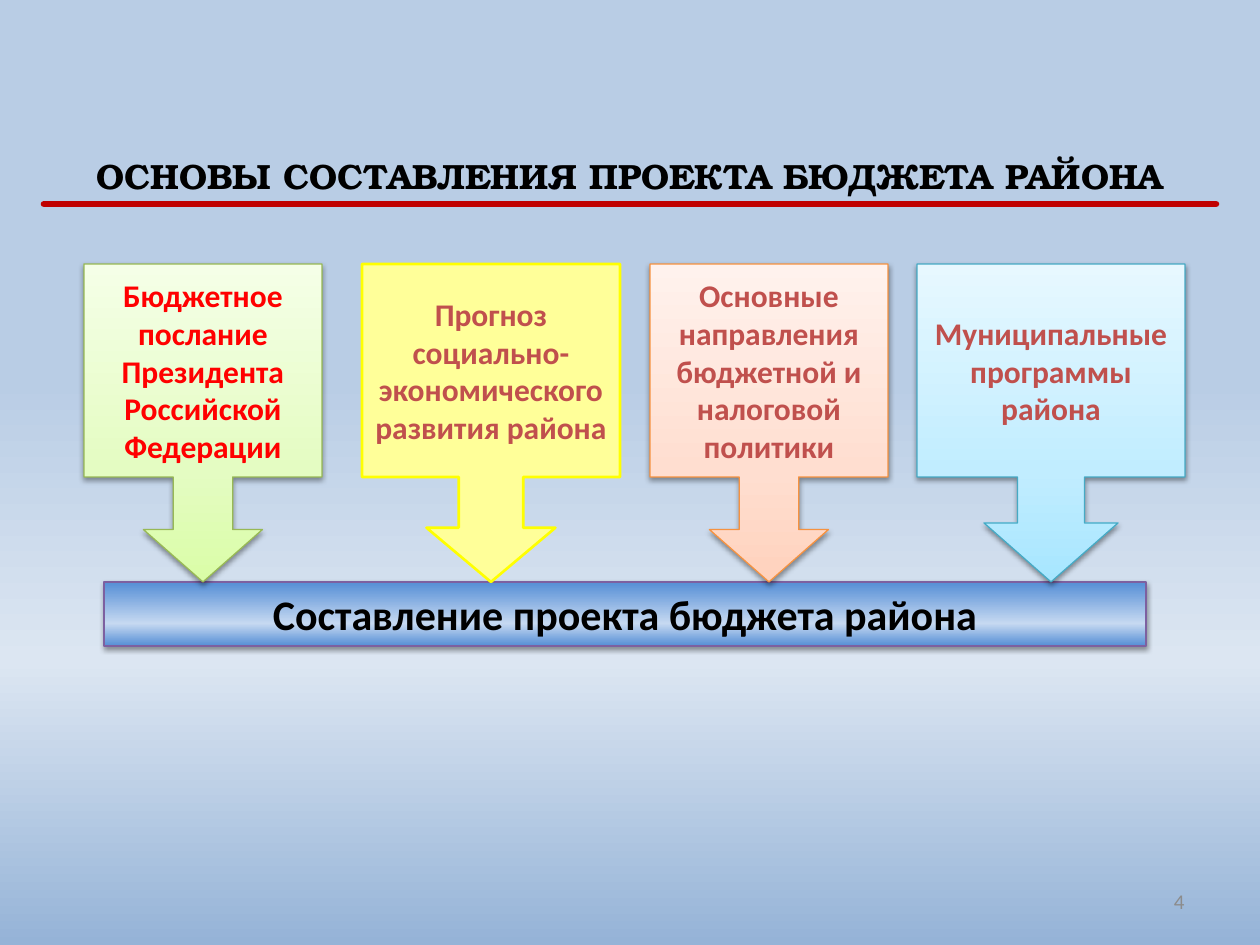
from dataclasses import dataclass

from lxml import etree
from pptx import Presentation
from pptx import util as u
from pptx.dml.color import RGBColor
from pptx.enum import shapes, text
from pptx.oxml.ns import qn

EMU_PER_PX = 914400 / 126


@dataclass(frozen=True)
class Theme:
    heading_font: str = "TeX Gyre Bonum"
    body_font: str = "Calibri"
    title_size: int = 20
    bar_size: int = 24
    source_size: int = 18
    number_size: int = 12
    ink: str = "000000"
    alert: str = "FF0000"
    brick: str = "C0504D"
    grey: str = "8C8C8C"
    rule: str = "C00000"
    bar_line: str = "7D60A0"
    background: tuple = ((0, "B9CDE5"), (40, "B9CDE5"), (70, "DCE6F2"), (100, "95B3D7"))
    bar: tuple = ((0, "558ED5"), (35, "C6D9F1"), (100, "558ED5"))
    green: tuple = ((0, "DAFDA7"), (35, "E4FCC2"), (100, "F5FFE7"))
    peach: tuple = ((0, "FFD2BD"), (35, "FFDED0"), (100, "FFF2ED"))
    sky: tuple = ((0, "A7E6FF"), (35, "C1EDFF"), (100, "E7F8FF"))
    yellow: str = "FFFF99"


THEME = Theme()

# text, left, width, fill, line colour, line width, text colour, head length
SOURCES = (
    ("Бюджетное послание Президента Российской Федерации",
     0, 238, THEME.green, "98B955", 0.75, THEME.alert, 0.22),
    ("Прогноз социально-экономического развития района",
     278, 258, THEME.yellow, "FFFF00", 1.5, THEME.brick, 0.21),
    ("Основные направления бюджетной и налоговой политики",
     566, 238, THEME.peach, "F69240", 0.75, THEME.brick, 0.22),
    ("Муниципальные программы района",
     833, 268, THEME.sky, "46AAC5", 0.75, THEME.brick, 0.22),
)


def px(value):
    return u.Emu(round(value * EMU_PER_PX))


def rgb(value):
    return RGBColor.from_string(value)


def fill_gradient(fill, element, stops, angle):
    """Fill with any number of stops; the angle runs clockwise in degrees."""
    fill.gradient()
    gradient = element.find(".//" + qn("a:gradFill"))
    stop_list = gradient.find(qn("a:gsLst"))
    for stop in list(stop_list):
        stop_list.remove(stop)
    for position, color in stops:
        stop = etree.SubElement(stop_list, qn("a:gs"), pos=str(position * 1000))
        etree.SubElement(stop, qn("a:srgbClr"), val=color)
    gradient.find(qn("a:lin")).set("ang", str(angle * 60000))


def add_shadow(shape):
    effects = shape._element.spPr.find(qn("a:effectLst"))
    shadow = etree.SubElement(
        effects, qn("a:outerShdw"), blurRad=str(u.Pt(3.1)), dist=str(u.Pt(1.6)),
        dir=str(90 * 60000), rotWithShape="0")
    color = etree.SubElement(shadow, qn("a:srgbClr"), val="000000")
    etree.SubElement(color, qn("a:alpha"), val="38000")


def write_text(shape, words, *, size, color=THEME.ink, font=THEME.body_font,
               bold=True, align=text.PP_ALIGN.CENTER, inset=None):
    frame = shape.text_frame
    frame.word_wrap = True
    frame.vertical_anchor = text.MSO_ANCHOR.MIDDLE
    if inset is not None:
        frame.margin_left = frame.margin_right = px(inset)
        frame.margin_top = frame.margin_bottom = px(inset)
    paragraph = frame.paragraphs[0]
    paragraph.alignment = align
    run = paragraph.add_run()
    run.text = words
    run.font.name = font
    run.font.size = u.Pt(size)
    run.font.bold = bold
    run.font.color.rgb = rgb(color)


def add_block(slide, kind, box, fill, line, line_width):
    """A shape with a plain fill, or with a gradient and a soft shadow."""
    shape = slide.shapes.add_shape(kind, *map(px, box))
    shape.shadow.inherit = False
    shape.line.color.rgb = rgb(line)
    shape.line.width = u.Pt(line_width)
    if isinstance(fill, str):
        shape.fill.solid()
        shape.fill.fore_color.rgb = rgb(fill)
    else:
        fill_gradient(shape.fill, shape._element.spPr, fill, 270)
        add_shadow(shape)
    return shape


def add_heading(slide, left, top, width, height):
    """The title with a red rule along its lower edge."""
    title = slide.shapes.add_textbox(*map(px, (left, top, width, height)))
    write_text(title, "ОСНОВЫ СОСТАВЛЕНИЯ ПРОЕКТА БЮДЖЕТА РАЙОНА",
               size=THEME.title_size, font=THEME.heading_font)
    margin, bottom = 44, top + height
    rule = slide.shapes.add_connector(
        shapes.MSO_CONNECTOR.STRAIGHT,
        px(left + margin), px(bottom), px(left + width - margin), px(bottom))
    rule.line.color.rgb = rgb(THEME.rule)
    rule.line.width = u.Pt(3.75)
    rule.line._get_or_add_ln().set("cap", "rnd")
    etree.SubElement(rule._element.spPr, qn("a:effectLst"))


def add_result_bar(slide, *box):
    bar = add_block(slide, shapes.MSO_SHAPE.RECTANGLE, box,
                    THEME.bar, THEME.bar_line, 0.75)
    write_text(bar, "Составление проекта бюджета района", size=THEME.bar_size)


def add_sources(slide, left, top, height):
    """The row of callouts that point down at the result bar."""
    for words, offset, width, fill, line, line_width, color, head in SOURCES:
        callout = add_block(slide, shapes.MSO_SHAPE.DOWN_ARROW_CALLOUT,
                            (left + offset, top, width, height), fill, line, line_width)
        for index, value in enumerate((0.25, 0.25, head, 0.67)):
            callout.adjustments[index] = value
        write_text(callout, words, size=THEME.source_size, color=color, inset=0)


def add_slide_number(slide, *box):
    number = slide.shapes.add_textbox(*map(px, box))
    write_text(number, "4", size=THEME.number_size, color=THEME.grey,
               bold=False, align=text.PP_ALIGN.RIGHT)


def main():
    presentation = Presentation()
    presentation.slide_width, presentation.slide_height = px(1260), px(945)
    slide = presentation.slides.add_slide(presentation.slide_layouts[6])
    fill_gradient(slide.background.fill, slide._element, THEME.background, 90)
    add_heading(slide, 0, 147, 1260, 57)
    add_result_bar(slide, 104, 582, 1042, 64)
    add_sources(slide, 84, 264, 318)
    add_slide_number(slide, 903, 876, 294, 50)
    presentation.save("out.pptx")


if __name__ == "__main__":
    main()
